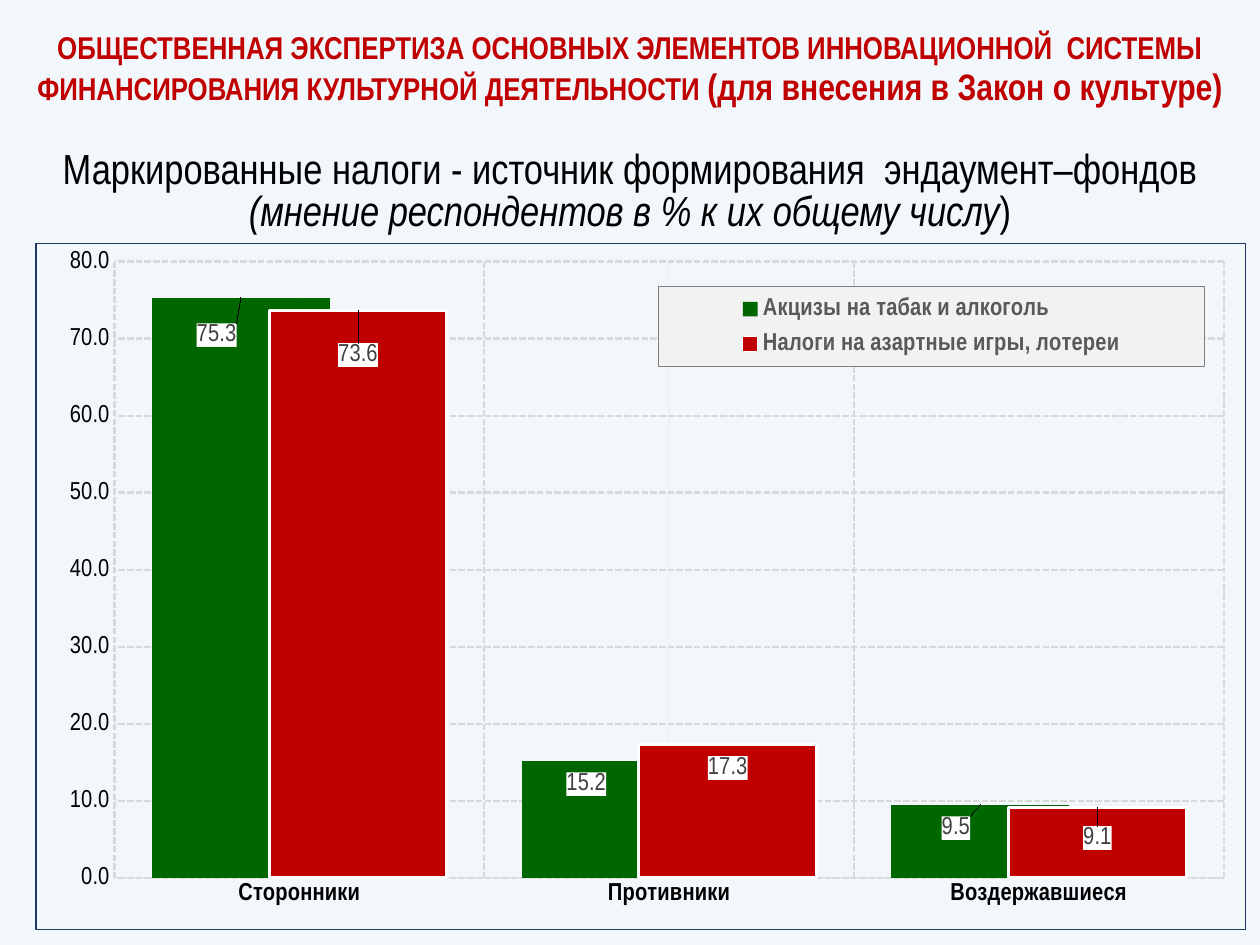
from dataclasses import dataclass

from pptx import Presentation
from pptx.chart.data import CategoryChartData
from pptx.dml.color import RGBColor
from pptx.enum.chart import XL_CHART_TYPE as ChartType
from pptx.enum.chart import XL_LABEL_POSITION as LabelPosition
from pptx.enum.chart import XL_LEGEND_POSITION as LegendPosition
from pptx.enum.chart import XL_TICK_MARK as TickMark
from pptx.enum.dml import MSO_LINE as LineStyle
from pptx.enum.text import MSO_ANCHOR as Anchor
from pptx.enum.text import MSO_AUTO_SIZE as AutoSize
from pptx.enum.text import PP_ALIGN as Align
from pptx.oxml import parse_xml
from pptx.oxml.ns import nsdecls
from pptx.util import Inches, Pt

FONT = "Arial Narrow"
RED, BLACK, GRID = "C00000", "000000", "D9D9D9"
NUMBER_FORMAT = "###0.0"


@dataclass
class TextPart:
    text: str
    size: float
    color: str = BLACK
    bold: bool = False
    italic: bool = False


@dataclass
class BarSeries:
    name: str
    values: tuple
    color: str
    label_shifts: tuple  # (x, y) per label, as fractions of the chart
    outline: str = ""


CATEGORIES = ("Сторонники", "Противники", "Воздержавшиеся")
SERIES = (
    BarSeries("Акцизы на табак и алкоголь", (75.3, 15.2, 9.5), "006600",
              ((-0.02, 0.03), (-0.02, 0.01), (-0.02, 0.01))),
    BarSeries("Налоги на азартные игры, лотереи", (73.6, 17.3, 9.1), RED,
              ((0, 0.04), (0, 0.01), (0, 0.02)), "FFFFFF"),
)
TITLE = [[
    TextPart("ОБЩЕСТВЕННАЯ ЭКСПЕРТИЗА ОСНОВНЫХ ЭЛЕМЕНТОВ ИННОВАЦИОННОЙ  СИСТЕМЫ "
             "ФИНАНСИРОВАНИЯ КУЛЬТУРНОЙ ДЕЯТЕЛЬНОСТИ ", 18, RED, bold=True),
    TextPart("(для внесения в Закон о культуре)", 21, RED, bold=True),
]]
SUBTITLE = [
    [TextPart("Маркированные налоги - источник формирования  эндаумент–фондов", 24)],
    [TextPart("(мнение респондентов в % к их общему числу", 24, italic=True),
     TextPart(")", 24)],
]


def rgb(color: str) -> RGBColor:
    return RGBColor.from_string(color)


def style_font(font, size: float, color: str, bold=False, italic=False) -> None:
    font.name, font.size = FONT, Pt(size)
    font.bold, font.italic = bold, italic
    font.color.rgb = rgb(color)


def write_text(shape, paragraphs: list) -> None:
    frame = shape.text_frame
    frame.word_wrap = True
    frame.auto_size = AutoSize.NONE
    frame.vertical_anchor = Anchor.MIDDLE
    for index, parts in enumerate(paragraphs):
        paragraph = frame.add_paragraph() if index else frame.paragraphs[0]
        paragraph.alignment = Align.CENTER
        paragraph.line_spacing = Pt(24)
        paragraph.space_before = Pt(0)
        for part in parts:
            run = paragraph.add_run()
            run.text = part.text
            style_font(run.font, part.size, part.color, part.bold, part.italic)


def box_properties(fill: str = "", line: str = ""):
    """Fill and outline for chart parts that have no format object."""
    def paint(color: str) -> str:
        if not color:
            return "<a:noFill/>"
        return f'<a:solidFill><a:srgbClr val="{color}"/></a:solidFill>'
    return parse_xml(f'<c:spPr {nsdecls("c", "a")}>{paint(fill)}'
                     f'<a:ln w="{Pt(0.75)}">{paint(line)}</a:ln></c:spPr>')


def manual_layout(x: float, y: float, width=None, height=None, inner=False):
    target = '<c:layoutTarget val="inner"/>' if inner else ""
    modes = size = ""
    if width:
        modes = '<c:xMode val="edge"/><c:yMode val="edge"/>'
        size = f'<c:w val="{width}"/><c:h val="{height}"/>'
    return parse_xml(f'<c:layout {nsdecls("c")}><c:manualLayout>{target}{modes}'
                     f'<c:x val="{x}"/><c:y val="{y}"/>{size}'
                     '</c:manualLayout></c:layout>')


def style_axis(axis, bold: bool) -> None:
    axis.major_tick_mark = axis.minor_tick_mark = TickMark.NONE
    axis.has_major_gridlines = True
    line = axis.major_gridlines.format.line
    line.color.rgb, line.width = rgb(GRID), Pt(1.25)
    line.dash_style = LineStyle.SQUARE_DOT
    style_font(axis.tick_labels.font, 14, BLACK, bold)


def style_series(series, bars: BarSeries) -> None:
    series.format.fill.solid()
    series.format.fill.fore_color.rgb = rgb(bars.color)
    if bars.outline:
        series.format.line.color.rgb = rgb(bars.outline)
        series.format.line.width = Pt(1.75)
    labels = series.data_labels
    labels.show_value = True
    labels.number_format, labels.number_format_is_linked = NUMBER_FORMAT, False
    labels.position = LabelPosition.INSIDE_END
    style_font(labels.font, 14, "404040")
    labels._element.find("{*}txPr").addprevious(box_properties("FFFFFF"))
    for index, shift in enumerate(bars.label_shifts):
        label = series.points[index].data_label
        style_font(label.font, 14, "404040")
        label.position = LabelPosition.INSIDE_END
        element = labels._element.findall("{*}dLbl")[index]
        element.find("{*}idx").addnext(manual_layout(*shift))
        element.find("{*}txPr").addprevious(box_properties("FFFFFF"))


def add_bar_chart(slide) -> None:
    data = CategoryChartData(number_format=NUMBER_FORMAT)
    data.categories = CATEGORIES
    for bars in SERIES:
        data.add_series(bars.name, bars.values)
    chart = slide.shapes.add_chart(
        ChartType.COLUMN_CLUSTERED, Inches(0.28), Inches(1.93),
        Inches(9.61), Inches(5.45), data).chart
    chart.has_title = False
    chart.font.name, chart.font.size = "Calibri", Pt(10)
    chart.font.color.rgb = rgb(BLACK)
    chart._chartSpace.find("{*}txPr").addprevious(box_properties(line="203864"))

    # Plot area and bars
    plot = chart.plots[0]
    plot.gap_width, plot.overlap, plot.vary_by_categories = 42, 34, False
    area = chart._chartSpace.chart.plotArea
    for old_layout in area.findall("{*}layout"):
        area.remove(old_layout)
    area.insert(0, manual_layout(0.065, 0.026, 0.917, 0.899, inner=True))
    for series, bars in zip(plot.series, SERIES):
        style_series(series, bars)

    # Axes
    category_axis, value_axis = chart.category_axis, chart.value_axis
    style_axis(category_axis, bold=True)
    category_axis.format.line.color.rgb = rgb(GRID)
    category_axis.format.line.width = Pt(0.75)
    category_axis.has_minor_gridlines = True
    minor_gridlines = category_axis._element.find("{*}minorGridlines")
    minor_gridlines.append(box_properties(line="F2F2F2"))
    style_axis(value_axis, bold=False)
    value_axis.format.line.fill.background()
    value_axis.minimum_scale, value_axis.maximum_scale = 0, 80
    value_axis.major_unit = 10
    value_axis.tick_labels.number_format = NUMBER_FORMAT
    value_axis.tick_labels.number_format_is_linked = False

    # Legend
    chart.has_legend = True
    legend = chart.legend
    legend.position, legend.include_in_layout = LegendPosition.BOTTOM, False
    style_font(legend.font, 14, "595959", bold=True)
    element = legend._element
    for old_layout in element.findall("{*}layout"):
        element.remove(old_layout)
    element.find("{*}legendPos").addnext(manual_layout(0.515, 0.062, 0.451, 0.117))
    element.find("{*}txPr").addprevious(box_properties("F2F2F2", "7F7F7F"))


def main() -> None:
    presentation = Presentation()
    presentation.slide_width, presentation.slide_height = Inches(10), Inches(7.5)
    slide = presentation.slides.add_slide(presentation.slide_layouts[5])
    slide.background.fill.solid()
    slide.background.fill.fore_color.rgb = rgb("F2F7FC")

    # Heading and chart caption
    title = slide.shapes.title
    title.left, title.top = Inches(0), Inches(0.14)
    title.width, title.height = Inches(10), Inches(0.77)
    write_text(title, TITLE)
    caption = slide.shapes.add_textbox(Inches(0), Inches(1.15), Inches(10), Inches(0.77))
    write_text(caption, SUBTITLE)

    add_bar_chart(slide)
    presentation.save("out.pptx")


if __name__ == "__main__":
    main()
